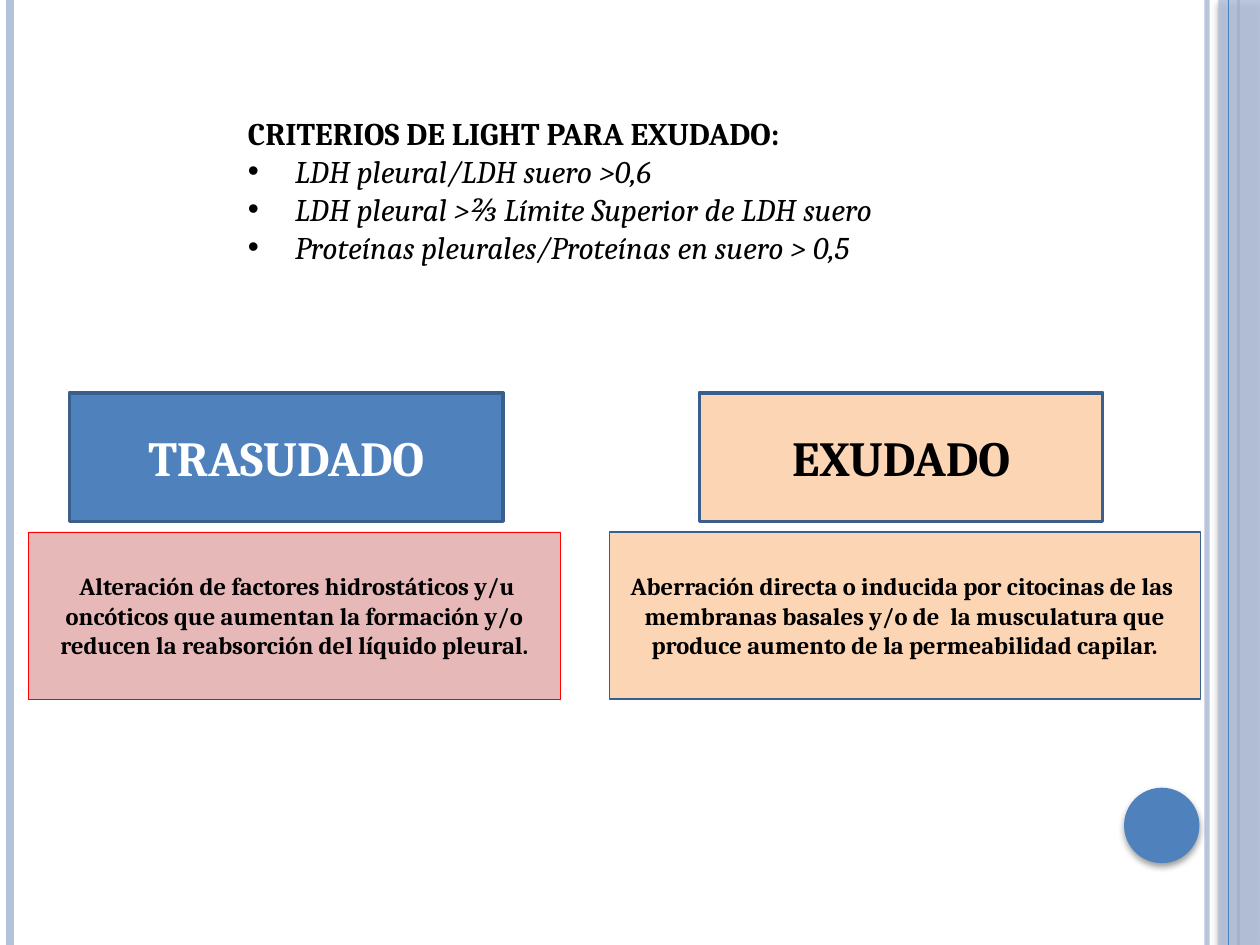
import lxml.etree
import pptx
import pptx.dml.color
import pptx.enum.shapes
import pptx.enum.text
import pptx.oxml.ns
import pptx.util
from pptx.util import Cm

FONT = "Cambria"
BLACK, BLUE, PALE_BLUE = "000000", "4F81BD", "B3C1DB"
PEACH, PINK, NAVY = "FCD5B5", "E6B9B8", "3A5F8C"
SLIDE_HEIGHT = 19.05
SHAPES = pptx.enum.shapes.MSO_SHAPE


def color(hex_value):
    return pptx.dml.color.RGBColor.from_string(hex_value)


def add_element(parent, tag, **attributes):
    element = lxml.etree.SubElement(parent, pptx.oxml.ns.qn(tag))
    for name, value in attributes.items():
        element.set(name, str(value))
    return element


def set_opacity(properties, percent):
    solid_color = next(properties.iter(pptx.oxml.ns.qn("a:srgbClr")))
    add_element(solid_color, "a:alpha", val=percent * 1000)


def set_font(paragraph, size, hex_value, bold=False, italic=False):
    font = paragraph.font
    font.name, font.size = FONT, pptx.util.Pt(size)
    font.bold, font.italic = bold, italic
    font.color.rgb = color(hex_value)


def add_vertical_rule(slide, x, hex_value, width, opacity=None):
    rule = slide.shapes.add_connector(
        pptx.enum.shapes.MSO_CONNECTOR.STRAIGHT, Cm(x), Cm(0), Cm(x), Cm(SLIDE_HEIGHT))
    rule.line.color.rgb = color(hex_value)
    rule.line.width = pptx.util.Pt(width)
    properties = rule._element.spPr
    if opacity:
        set_opacity(properties, opacity)
    add_element(properties, "a:effectLst")


def add_filled_shape(slide, kind, left, top, width, height, fill):
    shape = slide.shapes.add_shape(kind, Cm(left), Cm(top), Cm(width), Cm(height))
    shape.shadow.inherit = False
    shape.fill.solid()
    shape.fill.fore_color.rgb = color(fill)
    shape.line.fill.background()
    return shape


def add_shadowed_shape(slide, kind, left, top, width, height, fill, opacity=None):
    shape = add_filled_shape(slide, kind, left, top, width, height, fill)
    properties = shape._element.spPr
    if opacity:
        set_opacity(properties, opacity)
    effects = properties.find(pptx.oxml.ns.qn("a:effectLst"))
    shadow = add_element(effects, "a:outerShdw", blurRad=pptx.util.Pt(4),
                         dist=pptx.util.Pt(2), dir=90 * 60000, rotWithShape=0)
    shadow_color = add_element(shadow, "a:srgbClr", val=BLACK)
    add_element(shadow_color, "a:alpha", val=40000)


def add_text_box_shape(slide, left, top, width, height, fill, line, line_width,
                       text, size, text_color=BLACK):
    box = add_filled_shape(slide, SHAPES.RECTANGLE, left, top, width, height, fill)
    box.line.color.rgb = color(line)
    box.line.width = pptx.util.Pt(line_width)
    frame = box.text_frame
    frame.word_wrap = True
    frame.vertical_anchor = pptx.enum.text.MSO_ANCHOR.MIDDLE
    paragraph = frame.paragraphs[0]
    paragraph.text = text
    paragraph.alignment = pptx.enum.text.PP_ALIGN.CENTER
    set_font(paragraph, size, text_color, bold=True)


def add_criteria(slide, left, top, width, height, heading, criteria):
    box = slide.shapes.add_textbox(Cm(left), Cm(top), Cm(width), Cm(height))
    frame = box.text_frame
    frame.word_wrap = True
    frame.paragraphs[0].text = heading
    set_font(frame.paragraphs[0], 18, BLACK, bold=True)
    for criterion in criteria:
        paragraph = frame.add_paragraph()
        paragraph.text = criterion
        set_font(paragraph, 18, BLACK, italic=True)
        properties = paragraph._p.get_or_add_pPr()
        properties.set("marL", str(Cm(0.95)))
        properties.set("indent", str(Cm(-0.95)))
        bullet_parts = [
            ("a:buClr", {}), ("a:buFont", {"typeface": "Arial"}), ("a:buChar", {"char": "•"})]
        for index, (tag, attributes) in enumerate(bullet_parts):
            bullet = add_element(properties, tag, **attributes)
            if tag == "a:buClr":
                add_element(bullet, "a:srgbClr", val=BLACK)
            properties.insert(index, bullet)


def main():
    presentation = pptx.Presentation()
    presentation.slide_width, presentation.slide_height = Cm(25.4), Cm(SLIDE_HEIGHT)
    slide = presentation.slides.add_slide(presentation.slide_layouts[6])

    # Decoration at the edges
    add_vertical_rule(slide, 24.33, PALE_BLUE, 3, opacity=93)
    add_vertical_rule(slide, 0.2, PALE_BLUE, 4.5)
    add_vertical_rule(slide, 24.97, BLUE, 1.5)
    add_shadowed_shape(slide, SHAPES.RECTANGLE, 24.56, 0, 0.84, SLIDE_HEIGHT,
                       PALE_BLUE, opacity=87)
    add_vertical_rule(slide, 24.77, BLUE, 0.75)
    add_shadowed_shape(slide, SHAPES.OVAL, 22.66, 15.88, 1.52, 1.52, BLUE)

    # Criteria list
    add_criteria(slide, 4.75, 2.18, 16.08, 3.68, "CRITERIOS DE LIGHT PARA EXUDADO:", [
        "LDH pleural/LDH suero >0,6",
        "LDH pleural >⅔ Límite Superior de LDH suero",
        "Proteínas pleurales/Proteínas en suero > 0,5",
    ])

    # Headings of the two columns
    heading_top, heading_height = 7.92, 2.59
    add_text_box_shape(slide, 1.4, heading_top, 8.74, heading_height, BLUE, NAVY, 2,
                       "TRASUDADO", 28, "FFFFFF")
    add_text_box_shape(slide, 14.1, heading_top, 8.13, heading_height, PEACH, NAVY, 2,
                       "EXUDADO", 28)

    # Explanations below the headings
    detail_top, detail_height = 10.72, 3.38
    add_text_box_shape(
        slide, 0.58, detail_top, 10.72, detail_height, PINK, "FF0000", 0.25,
        " Alteración de factores hidrostáticos y/u oncóticos que aumentan la formación "
        "y/o reducen la reabsorción del líquido pleural.", 14)
    add_text_box_shape(
        slide, 12.29, detail_top, 11.91, detail_height, PEACH, "376092", 1,
        "Aberración directa o inducida por citocinas de las  membranas basales y/o de  "
        "la musculatura que produce aumento de la permeabilidad capilar.", 14)

    presentation.save("out.pptx")


if __name__ == "__main__":
    main()
